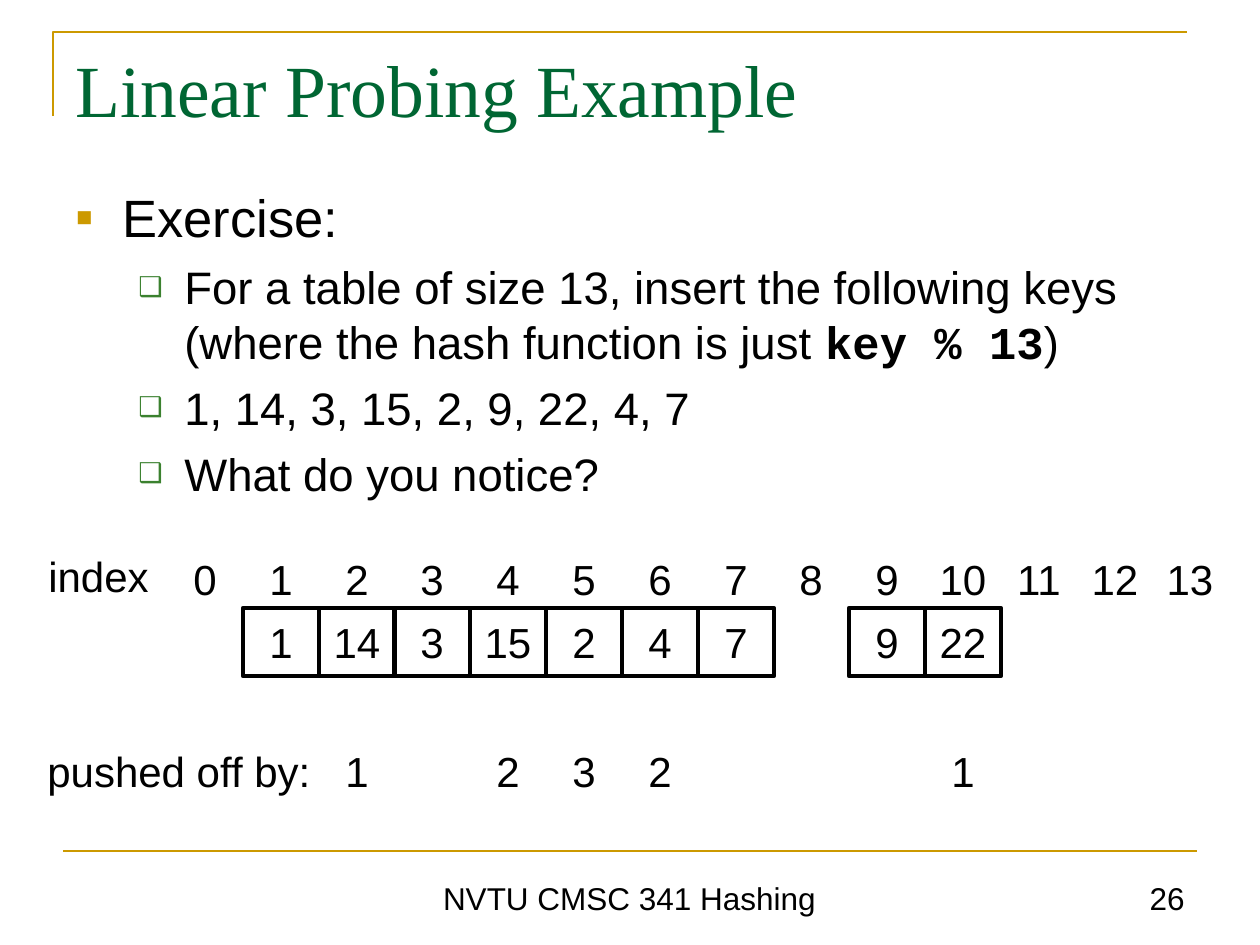
"""Build the slide with the linear probing exercise."""
import lxml.etree
import pptx
import pptx.dml.color
import pptx.enum.shapes
import pptx.enum.text
import pptx.oxml.ns
import pptx.util

ALIGN = pptx.enum.text.PP_ALIGN
ANCHOR = pptx.enum.text.MSO_ANCHOR
SCALE = 914400 / 126
GOLD, GREEN, LEAF, BLACK = "CC9900", "006633", "3B812F", "000000"
PITCH, FIRST_CELL = 75.8, 167


def emu(px):
    return pptx.util.Emu(round(px * SCALE))


def rgb(color):
    return pptx.dml.color.RGBColor.from_string(color)


def assign(obj, values):
    for name, value in values.items():
        setattr(obj, name, value)


def cell_left(index):
    return round(FIRST_CELL + PITCH * index)


class Deck:
    def __init__(self, width, height):
        self.prs = pptx.Presentation()
        assign(self.prs, {"slide_width": emu(width), "slide_height": emu(height)})
        self.s = self.prs.slides.add_slide(self.prs.slide_layouts[6])
        self.style = {"name": "Arial", "size": 24, "color": BLACK}

    def run(self, p, text, **style):
        r = p.add_run()
        r.text = text
        values = {**self.style, **style}
        r.font.color.rgb = rgb(values.pop("color"))
        values["size"] = pptx.util.Pt(values["size"])
        assign(r.font, values)

    def frame(self, sp, anchor):
        tf = sp.text_frame
        assign(tf, {"word_wrap": True, "vertical_anchor": anchor})
        return tf

    def text(self, box, text, align=ALIGN.CENTER, anchor=ANCHOR.MIDDLE, **style):
        sp = self.s.shapes.add_textbox(*map(emu, box))
        p = self.frame(sp, anchor).paragraphs[0]
        p.alignment = align
        self.run(p, text, **style)

    def cell(self, box, text):
        sp = self.s.shapes.add_shape(pptx.enum.shapes.MSO_SHAPE.RECTANGLE, *map(emu, box))
        sp.shadow.inherit = False
        sp.fill.background()
        self.outline(sp, BLACK, 2.5)
        p = self.frame(sp, ANCHOR.MIDDLE).paragraphs[0]
        p.alignment = ALIGN.CENTER
        self.run(p, text)

    def outline(self, sp, color, width):
        sp.line.color.rgb = rgb(color)
        sp.line.width = pptx.util.Pt(width)

    def line(self, x1, y1, x2, y2, color, width):
        kind = pptx.enum.shapes.MSO_CONNECTOR.STRAIGHT
        sp = self.s.shapes.add_connector(kind, *map(emu, (x1, y1, x2, y2)))
        self.outline(sp, color, width)
        lxml.etree.SubElement(sp._element.spPr, pptx.oxml.ns.qn("a:effectLst"))

    def polyline(self, points, color, width):
        builder = self.s.shapes.build_freeform(*points[0], scale=SCALE)
        builder.add_line_segments(points[1:], close=False)
        sp = builder.convert_to_shape()
        sp.shadow.inherit = False
        sp.fill.background()
        self.outline(sp, color, width)

    def bullet(self, p, char, color, percent, indent, hanging, level):
        p.level = level
        pPr = p._p.get_or_add_pPr()
        pPr.set("marL", str(emu(indent)))
        pPr.set("indent", str(-emu(hanging)))
        qn, sub = pptx.oxml.ns.qn, lxml.etree.SubElement
        sub(sub(pPr, qn("a:buClr")), qn("a:srgbClr"), val=color)
        sub(pPr, qn("a:buSzPct"), val=str(percent * 1000))
        sub(pPr, qn("a:buFont"), typeface="Arial")
        sub(pPr, qn("a:buChar"), char=char)

    def bullets(self, box, items):
        tf = self.frame(self.s.shapes.add_textbox(*map(emu, box)), ANCHOR.TOP)
        for i, (level, runs) in enumerate(items):
            p = tf.add_paragraph() if i else tf.paragraphs[0]
            size, before, mark = LEVELS[level]
            p.space_before = pptx.util.Pt(before)
            self.bullet(p, *mark, level)
            for text, style in runs:
                self.run(p, text, size=size, **style)


LEVELS = [(30, 7.5, ("▪", GOLD, 100, 47, 47)), (26, 6.5, ("❑", LEAF, 60, 109, 46))]
CODE = {"name": "Courier New", "bold": True}
EXERCISE = [
    (0, [("Exercise:", {})]),
    (1, [("For a table of size 13, insert the following keys (where the hash function is just ", {}),
         ("key % 13", CODE), (")", {})]),
    (1, [("1, 14, 3, 15, 2, 9, 22, 4, 7", {})]),
    (1, [("What do you notice?", {})]),
]
KEYS = {1: 1, 2: 14, 3: 3, 4: 15, 5: 2, 6: 4, 7: 7, 9: 9, 10: 22}
PUSHES = {2: 1, 4: 2, 5: 3, 6: 2, 10: 1}


def main():
    deck = Deck(1260, 945)
    deck.polyline([(53, 116), (53, 32), (1187, 32)], GOLD, 1.5)
    deck.line(63, 851, 1197, 851, GOLD, 1.5)
    deck.text((63, 38, 1133, 140), "Linear Probing Example", ALIGN.LEFT, ANCHOR.TOP,
              name="Times New Roman", size=42, color=GREEN)
    deck.bullets((63, 179, 1133, 665), EXERCISE)
    deck.text((220, 861, 819, 62), "NVTU CMSC 341 Hashing", anchor=ANCHOR.BOTTOM, size=18)
    deck.text((903, 861, 294, 62), "26", ALIGN.RIGHT, ANCHOR.BOTTOM, size=18)
    deck.text((31, 547, 135, 58), "index")
    for index in range(14):
        deck.text((cell_left(index), 550, 76, 58), str(index))
    for index, key in KEYS.items():
        deck.cell((cell_left(index), 608, 76, 68), str(key))
    deck.text((35, 742, 301, 58), "pushed off by:", ALIGN.LEFT)
    for index, steps in PUSHES.items():
        deck.text((cell_left(index), 742, 76, 58), str(steps))
    deck.prs.save("out.pptx")


if __name__ == "__main__":
    main()
